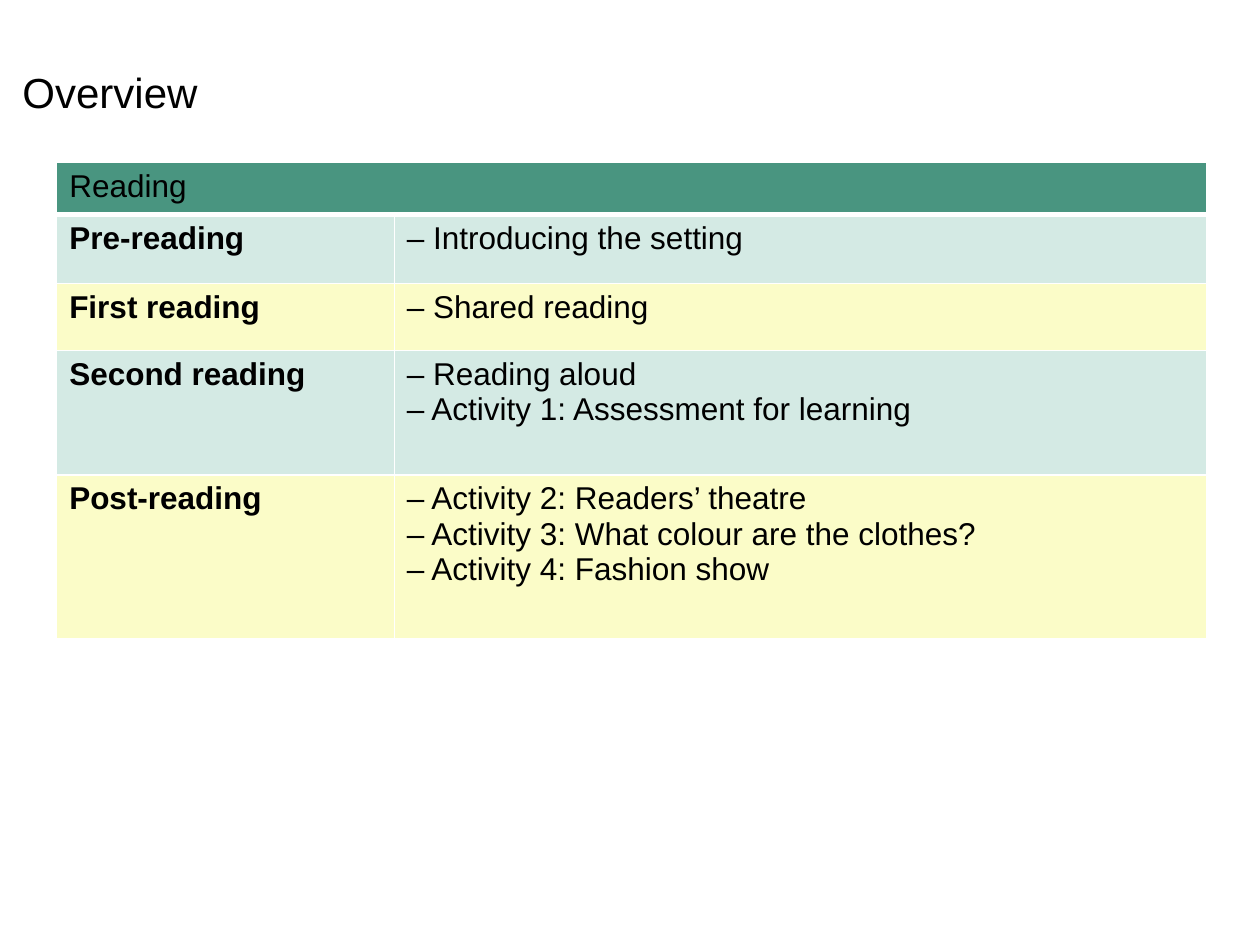
from pptx import Presentation
from pptx.dml.color import RGBColor as Rgb
from pptx.oxml import parse_xml as xml
from pptx.oxml.ns import nsdecls as decls
from pptx.util import Inches as In, Pt

theme = {
    "head": "499580",
    "bands": ["D4EAE4", "FBFCC8"],
    "edge": "FFFFFF",
    "title": {"name": "Arial", "size": Pt(24), "bold": False},
    "label": {"name": "Arial", "size": Pt(18), "bold": True},
    "body": {"name": "Arial", "size": Pt(18), "bold": False},
    "ink": "000000",
}
cols = [2.68, 6.45]
rows = [0.41, 0.55, 0.53, 0.99, 1.3]
plan = [
    ("Reading", []),
    ("Pre-reading", ["– Introducing the setting"]),
    ("First reading", ["– Shared reading"]),
    ("Second reading", ["– Reading aloud", "– Activity 1: Assessment for learning"]),
    ("Post-reading", [
        "– Activity 2: Readers’ theatre",
        "– Activity 3: What colour are the clothes?",
        "– Activity 4: Fashion show",
    ]),
]


def write(frame, lines, style):
    frame.text = "\n".join(lines)
    for para in frame.paragraphs:
        for run in para.runs:
            for key, val in theme[style].items():
                setattr(run.font, key, val)
            run.font.color.rgb = Rgb.from_string(theme["ink"])


def edge(cell, sides):
    props = cell._tc.get_or_add_tcPr()
    for spot, (side, width) in enumerate(sides.items()):
        props.insert(spot, xml(
            f'<a:ln{side} {decls("a")} w="{Pt(width)}"><a:solidFill>'
            f'<a:srgbClr val="{theme["edge"]}"/></a:solidFill></a:ln{side}>'
        ))


deck = Presentation()
deck.slide_width, deck.slide_height = In(10), In(7.5)
wide, high = deck.slide_width, deck.slide_height
slide = deck.slides.add_slide(deck.slide_layouts[6])

title = slide.shapes.add_textbox(
    int(wide * 0.008), int(high * 0.064), int(wide * 0.16), int(high * 0.068)
)
title.text_frame.word_wrap = True
write(title.text_frame, ["Overview"], "title")

grid = slide.shapes.add_table(
    len(rows), len(cols), int(wide * 0.045), int(high * 0.172),
    In(sum(cols)), In(sum(rows)),
).table
for col, size in zip(grid.columns, cols):
    col.width = In(size)
for row, size in zip(grid.rows, rows):
    row.height = In(size)
grid.cell(0, 0).merge(grid.cell(0, 1))

for at, (stage, tasks) in enumerate(plan):
    tint = theme["bands"][(at - 1) % 2] if at else theme["head"]
    for cell in grid.rows[at].cells:
        cell.fill.solid()
        cell.fill.fore_color.rgb = Rgb.from_string(tint)
        edge(cell, {"L": 1, "R": 1, "T": 3 if at == 1 else 1, "B": 1 if at else 3})
    write(grid.cell(at, 0).text_frame, [stage], "label" if at else "body")
    if tasks:
        write(grid.cell(at, 1).text_frame, tasks, "body")

deck.save("out.pptx")
